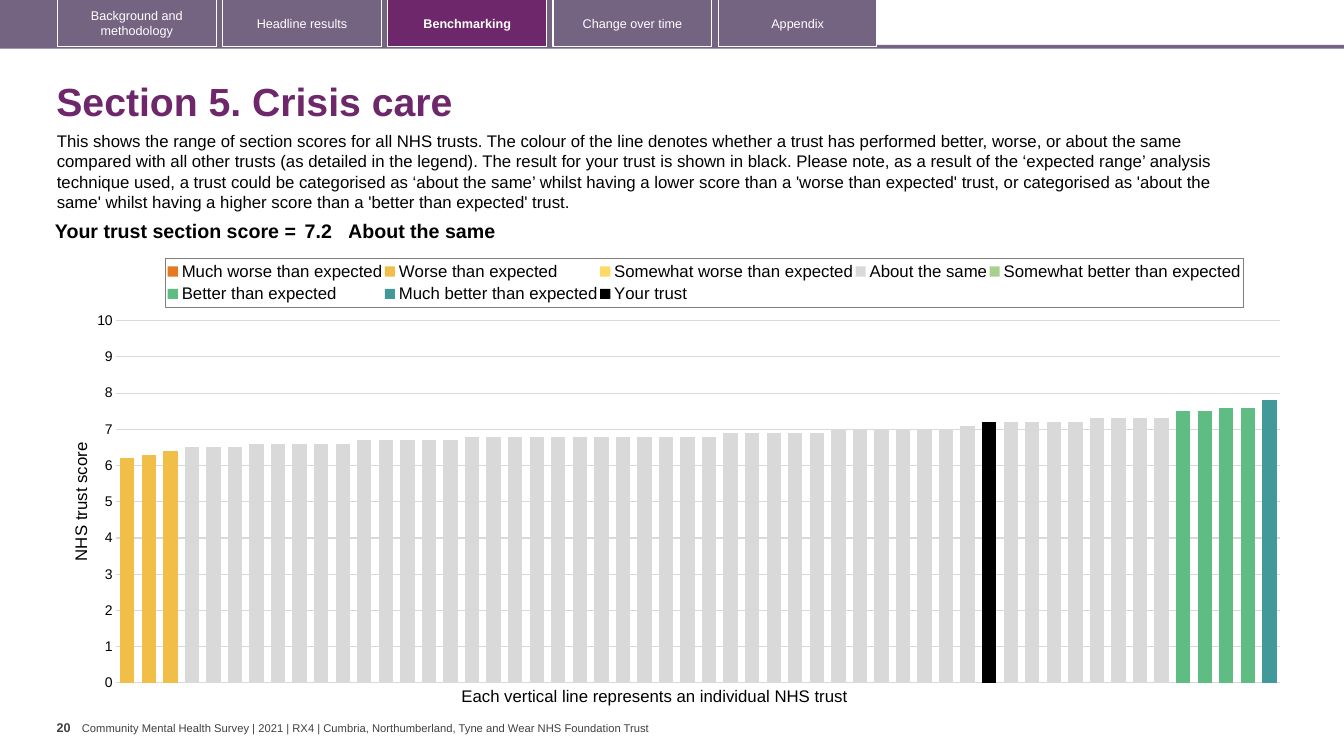
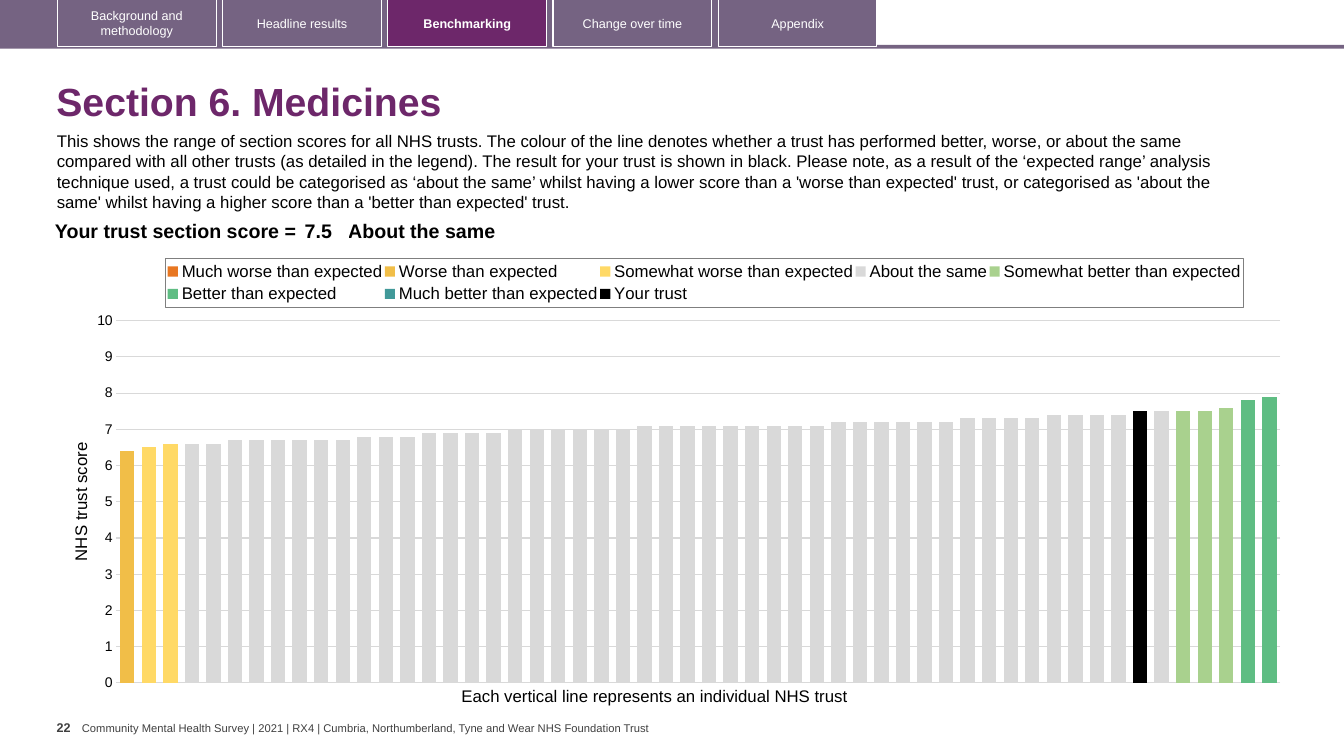
from pptx import Presentation
from pptx.chart.data import CategoryChartData
from pptx.dml.color import RGBColor
from pptx.enum.chart import XL_CHART_TYPE as ChartType, XL_LEGEND_POSITION as LegendPosition
from pptx.enum.chart import XL_TICK_MARK as TickMark
from pptx.enum.shapes import MSO_SHAPE as Shape
from pptx.enum.text import MSO_ANCHOR as Anchor, PP_ALIGN as Align
from pptx.oxml import parse_xml
from pptx.oxml.ns import nsdecls, qn
from pptx.util import Pt
from copy import deepcopy

PURPLE, MAUVE, GREY, BLACK, WHITE, GRID = "6D276A", "756382", "404040", "000000", "FFFFFF", "D9D9D9"
TABS = ["Background and methodology", "Headline results", "Benchmarking", "Change over time", "Appendix"]
CURRENT_TAB = "Benchmarking"
FOOTER = ("Community Mental Health Survey | 2021 | RX4 | "
          "Cumbria, Northumberland, Tyne and Wear NHS Foundation Trust")
EXPLANATION = (
    "This shows the range of section scores for all NHS trusts. The colour of the line denotes whether "
    "a trust has performed better, worse, or about the same compared with all other trusts (as detailed "
    "in the legend). The result for your trust is shown in black. Please note, as a result of the "
    "‘expected range’ analysis technique used, a trust could be categorised as ‘about the same’ whilst "
    "having a lower score than a 'worse than expected' trust, or categorised as 'about the same' whilst "
    "having a higher score than a 'better than expected' trust.")
BAND_COLOURS = {
    "Much worse than expected": "E87722",
    "Worse than expected": "F1BE48",
    "Somewhat worse than expected": "FFD966",
    "About the same": "D9D9D9",
    "Somewhat better than expected": "A9D18E",
    "Better than expected": "5FBD83",
    "Much better than expected": "419999",
}
TRUST_COUNT = 54
# Scores run in ascending order through the bands; "position" is your trust's place, from 0.
SECTIONS = [
    {"page": "20", "title": "Section 5. Crisis care", "score": 7.2, "position": 40, "bands": {
        "Worse than expected": [6.2, 6.3, 6.4],
        "About the same": [6.5] * 3 + [6.6] * 5 + [6.7] * 5 + [6.8] * 12 + [6.9] * 5
                          + [7.0] * 6 + [7.1] + [7.2] * 5 + [7.3] * 4,
        "Better than expected": [7.5, 7.5, 7.6, 7.6],
        "Much better than expected": [7.8]}},
    {"page": "22", "title": "Section 6. Medicines", "score": 7.5, "position": 47, "bands": {
        "Worse than expected": [6.4],
        "Somewhat worse than expected": [6.5, 6.6],
        "About the same": [6.6] * 2 + [6.7] * 6 + [6.8] * 3 + [6.9] * 4 + [7.0] * 6
                          + [7.1] * 9 + [7.2] * 6 + [7.3] * 4 + [7.4] * 4 + [7.5] * 2,
        "Somewhat better than expected": [7.5, 7.5, 7.6],
        "Better than expected": [7.8, 7.9]}},
]


def colour(hex_string):
    return RGBColor.from_string(hex_string)


def write(frame, text, size, hex_string, bold=False, align=None, **frame_format):
    """Fill a text frame; frame_format sets its margins, anchor and wrapping."""
    for name, value in {"word_wrap": True, **frame_format}.items():
        setattr(frame, name, value)
    paragraph = frame.paragraphs[0]
    paragraph.alignment = align
    run = paragraph.add_run()
    run.text = text
    for name, value in {"name": "Arial", "size": Pt(size), "bold": bold}.items():
        setattr(run.font, name, value)
    run.font.color.rgb = colour(hex_string)
    return paragraph


presentation = Presentation()
presentation.slide_width, presentation.slide_height = Pt(960), Pt(540)
no_margins = dict.fromkeys(["margin_left", "margin_top", "margin_right", "margin_bottom"], 0)

for section in SECTIONS:
    slide = presentation.slides.add_slide(presentation.slide_layouts[6])
    shapes = slide.shapes

    # Navigation band and tabs
    for left, top, width, height in [(-2, 32, 962, 2.8), (-2, 0, 628.5, 33.5)]:
        band = shapes.add_shape(Shape.RECTANGLE, Pt(left), Pt(top), Pt(width), Pt(height))
        band.shadow.inherit = False
        band.fill.solid()
        band.fill.fore_color.rgb = colour(MAUVE)
        band.line.fill.background()
    for index, label in enumerate(TABS):
        current = label == CURRENT_TAB
        tab = shapes.add_shape(Shape.RECTANGLE, Pt(41 + 118 * index), Pt(-0.5), Pt(113.4), Pt(34))
        tab.shadow.inherit = False
        if current:
            tab.fill.solid()
            tab.fill.fore_color.rgb = colour(PURPLE)
        else:
            tab.fill.background()
        tab.line.color.rgb = colour(WHITE)
        tab.line.width = Pt(0.75)
        write(tab.text_frame, label, 9, WHITE, current, Align.CENTER, vertical_anchor=Anchor.MIDDLE)

    # Title, explanation, axis caption and footer
    title = shapes.add_textbox(Pt(33.2), Pt(48), Pt(899), Pt(52))
    write(title.text_frame, section["title"], 28, PURPLE, True,
          vertical_anchor=Anchor.MIDDLE).line_spacing = 0.9
    explanation = shapes.add_textbox(Pt(33.5), Pt(90), Pt(873), Pt(65.5))
    write(explanation.text_frame, EXPLANATION, 12, BLACK)
    caption = shapes.add_textbox(Pt(322.5), Pt(486), Pt(296), Pt(22))
    write(caption.text_frame, "Each vertical line represents an individual NHS trust", 12, BLACK)
    page_number = shapes.add_textbox(Pt(40.5), Pt(511), Pt(18), Pt(29))
    write(page_number.text_frame, section["page"], 9, GREY, True, margin_left=0, margin_right=0)
    footer = shapes.add_textbox(Pt(58.5), Pt(515.5), Pt(420), Pt(9.5))
    write(footer.text_frame, FOOTER, 8, GREY, vertical_anchor=Anchor.MIDDLE, **no_margins)

    # Chart data: each band holds its own stretch of trusts
    chart_data = CategoryChartData(number_format="0.0")
    chart_data.categories = [str(number + 1) for number in range(TRUST_COUNT)]
    start = 0
    for name in BAND_COLOURS:
        scores = section["bands"].get(name, [])
        after = TRUST_COUNT - start - len(scores)
        chart_data.add_series(name, [None] * start + scores + [None] * after)
        start += len(scores)
    your_trust = [None] * TRUST_COUNT
    your_trust[section["position"]] = section["score"]
    chart_data.add_series("Your trust", your_trust)

    chart = shapes.add_chart(ChartType.COLUMN_CLUSTERED, Pt(48.2), Pt(178), Pt(875), Pt(319.5),
                             chart_data).chart
    chart.has_title = False
    chart.font.name, chart.font.size = "Calibri", Pt(10)
    chart.font.color.rgb = colour(BLACK)
    plot = chart.plots[0]
    plot.gap_width, plot.overlap, plot.vary_by_categories = 50, 100, False
    for series, hex_string in zip(plot.series, [*BAND_COLOURS.values(), BLACK]):
        series.format.fill.solid()
        series.format.fill.fore_color.rgb = colour(hex_string)
        series.invert_if_negative = False

    # Axes
    chart.category_axis.visible = False
    value_axis = chart.value_axis
    axis_format = {"minimum_scale": 0, "maximum_scale": 10, "major_unit": 1,
                   "major_tick_mark": TickMark.NONE, "minor_tick_mark": TickMark.NONE}
    for name, value in axis_format.items():
        setattr(value_axis, name, value)
    value_axis.format.line.fill.background()
    value_axis.major_gridlines.format.line.color.rgb = colour(GRID)
    value_axis.major_gridlines.format.line.width = Pt(0.75)
    labels = value_axis.tick_labels
    labels.number_format, labels.number_format_is_linked = "0", False
    labels.font.name, labels.font.size = "Arial", Pt(10)
    labels.font.color.rgb = colour(BLACK)
    write(value_axis.axis_title.text_frame, "NHS trust score", 12, BLACK)

    # Legend
    chart.has_legend = True
    legend = chart.legend
    legend.position, legend.include_in_layout = LegendPosition.TOP, False
    legend.font.name, legend.font.size = "Arial", Pt(12)
    legend.font.color.rgb = colour(BLACK)

    # Your trust on a second pair of axes
    plot_area = chart.element.find(".//" + qn("c:plotArea"))
    plot_area.find(".//" + qn("c:title") + "//" + qn("a:bodyPr")).set("rot", "-5400000")
    bars = plot_area.find(qn("c:barChart"))
    trust_bars = deepcopy(bars)
    bars.remove(bars.findall(qn("c:ser"))[-1])
    for series_element in trust_bars.findall(qn("c:ser"))[:-1]:
        trust_bars.remove(series_element)
    bars.addnext(trust_bars)
    axes = [plot_area.find(qn(tag)) for tag in ("c:catAx", "c:valAx")]
    trust_axes = [deepcopy(axis) for axis in axes]
    new_ids = {axis.find(qn("c:axId")).get("val"): str(5001 + index) for index, axis in enumerate(axes)}
    for element in [trust_bars, *trust_axes]:
        for tag in ("c:axId", "c:crossAx"):
            for reference in element.findall(qn(tag)):
                reference.set("val", new_ids[reference.get("val")])
    right_axis = trust_axes[1]
    for tag in ("c:majorGridlines", "c:title"):
        right_axis.remove(right_axis.find(qn(tag)))
    for tag, value in {"c:axPos": "r", "c:tickLblPos": "none", "c:crosses": "max"}.items():
        right_axis.find(qn(tag)).set("val", value)
    axes[1].addnext(trust_axes[0])
    trust_axes[0].addnext(right_axis)

    # Fixed places for plot and legend, and the legend's frame
    legend_element = chart.element.find(".//" + qn("c:legend"))
    overlay = legend_element.find(qn("c:overlay"))
    for parent, follower, target, box in [
            (plot_area, bars, '<c:layoutTarget val="inner"/>', (0.04, 0.16, 0.95, 0.81)),
            (legend_element, overlay, "", (0.08, 0.02, 0.88, 0.11))]:
        for layout in parent.findall(qn("c:layout")):
            parent.remove(layout)
        modes = "".join(f'<c:{side}Mode val="edge"/>' for side in "xy")
        sizes = "".join(f'<c:{side} val="{value}"/>' for side, value in zip("xywh", box))
        follower.addprevious(parse_xml(
            f'<c:layout {nsdecls("c")}><c:manualLayout>{target}{modes}{sizes}</c:manualLayout></c:layout>'))
    overlay.addnext(parse_xml(
        f'<c:spPr {nsdecls("c", "a")}><a:ln w="9525"><a:solidFill><a:srgbClr val="7F7F7F"/>'
        '</a:solidFill></a:ln></c:spPr>'))

    # Score line
    table = shapes.add_table(1, 3, Pt(25.2), Pt(154.8), Pt(842), Pt(22)).table
    table.first_row = table.horz_banding = False
    columns = [(189.5, "Your trust section score =", Align.RIGHT, 3),
               (34, str(section["score"]), Align.LEFT, 3),
               (618.5, "About the same", Align.LEFT, 0)]
    for index, (width, text, align, margin) in enumerate(columns):
        table.columns[index].width = Pt(width)
        cell = table.cell(0, index)
        cell.fill.background()
        cell.margin_left = cell.margin_right = Pt(margin)
        cell.margin_top = cell.margin_bottom = Pt(3)
        write(cell.text_frame, text, 14, BLACK, True, align)

presentation.save("out.pptx")
